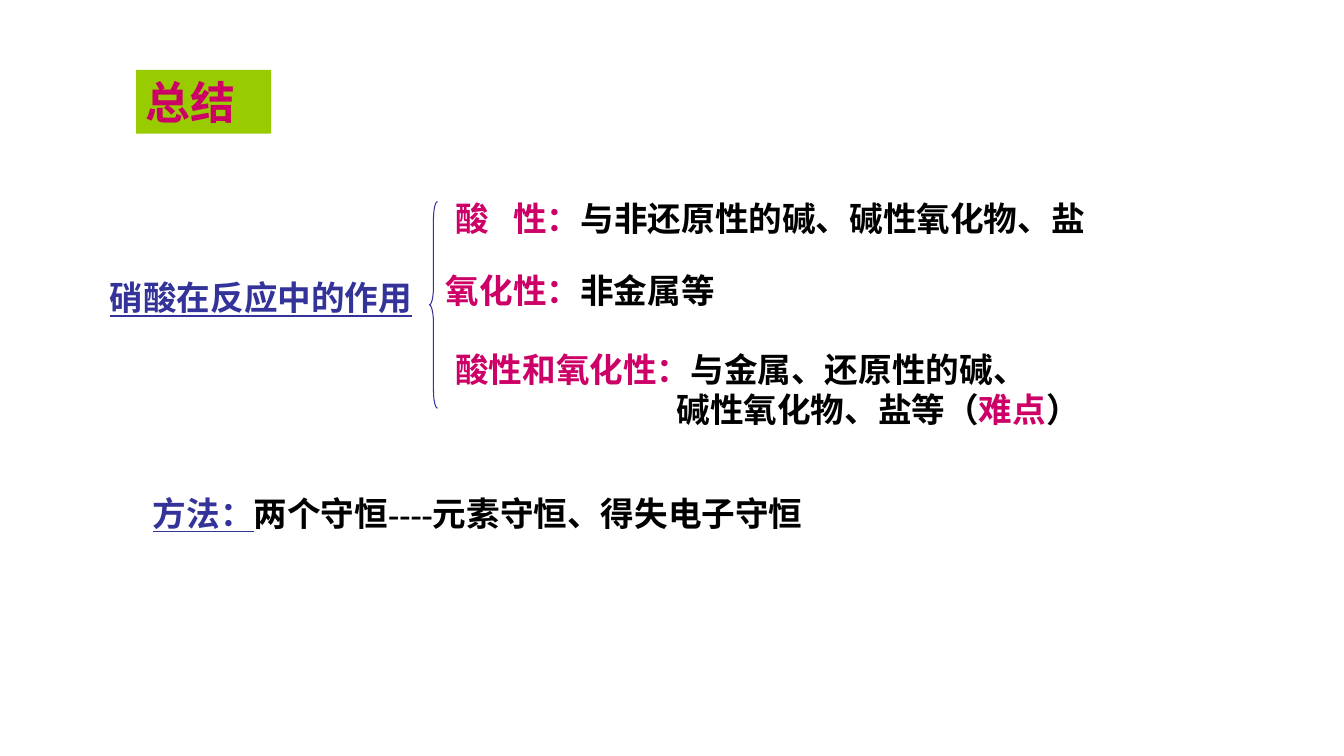
from pptx import Presentation
from pptx.dml.color import RGBColor
from pptx.enum.shapes import MSO_SHAPE
from pptx.enum.text import MSO_ANCHOR, PP_ALIGN
from pptx.util import Pt

BLUE = RGBColor(0x33, 0x33, 0x99)
PINK = RGBColor(0xCC, 0x00, 0x66)
BLACK = RGBColor(0x00, 0x00, 0x00)
GREEN = RGBColor(0x99, 0xCC, 0x00)


def add_run(p, text, color, size=24, font="Times New Roman"):
    r = p.add_run()
    r.text = text
    r.font.name = font
    r.font.size = Pt(size)
    r.font.bold = True
    r.font.underline = color == BLUE
    r.font.color.rgb = color
    return r


def add_text(left, top, width, height, *runs):
    sp = s.shapes.add_textbox(Pt(left), Pt(top), Pt(width), Pt(height))
    tf = sp.text_frame
    tf.word_wrap = True
    for text, color in runs:
        add_run(tf.paragraphs[0], text, color)
    return tf


prs = Presentation()
prs.slide_width = Pt(960)
prs.slide_height = Pt(540)
s = prs.slides.add_slide(prs.slide_layouts[6])

add_text(71.3, 194.4, 252, 36, ("硝酸在反应中的作用", BLUE))

brace = s.shapes.add_shape(MSO_SHAPE.LEFT_BRACE, Pt(306.7), Pt(144), Pt(5.8), Pt(147.6))
brace.shadow.inherit = False
brace.adjustments[0] = 2.18
brace.fill.background()
brace.line.color.rgb = BLUE
brace.line.width = Pt(0.75)

acid = add_text(318.2, 138.2, 516, 36, ("酸", PINK), (" 性：", PINK),
                ("与非还原性的碱、碱性氧化物、盐", BLACK))
acid.paragraphs[0].runs[0].font._element.set("spc", "1200")

add_text(311.5, 189.4, 330, 36, ("氧化性：", PINK), ("非金属等", BLACK))

both = add_text(318.2, 245.5, 504.7, 65.5, ("酸性和氧化性：", PINK),
                ("与金属、还原性的碱、", BLACK))
p = both.add_paragraph()
p._p.get_or_add_pPr().set("marL", str(Pt(158)))
for text, color in [("碱性氧化物、盐等（", BLACK), ("难点", PINK), ("）", BLACK)]:
    add_run(p, text, color)

add_text(102.2, 348.5, 674.6, 36, ("方法：", BLUE),
         ("两个守恒----元素守恒、得失电子守恒", BLACK))

title = s.shapes.add_shape(MSO_SHAPE.RECTANGLE, Pt(97.2), Pt(49.9), Pt(96.5), Pt(45.6))
title.shadow.inherit = False
title.fill.solid()
title.fill.fore_color.rgb = GREEN
title.line.fill.background()
tf = title.text_frame
tf.word_wrap = True
tf.vertical_anchor = MSO_ANCHOR.TOP
tf.paragraphs[0].alignment = PP_ALIGN.LEFT
add_run(tf.paragraphs[0], "总结", PINK, 32, "Arial")

prs.save("out.pptx")
